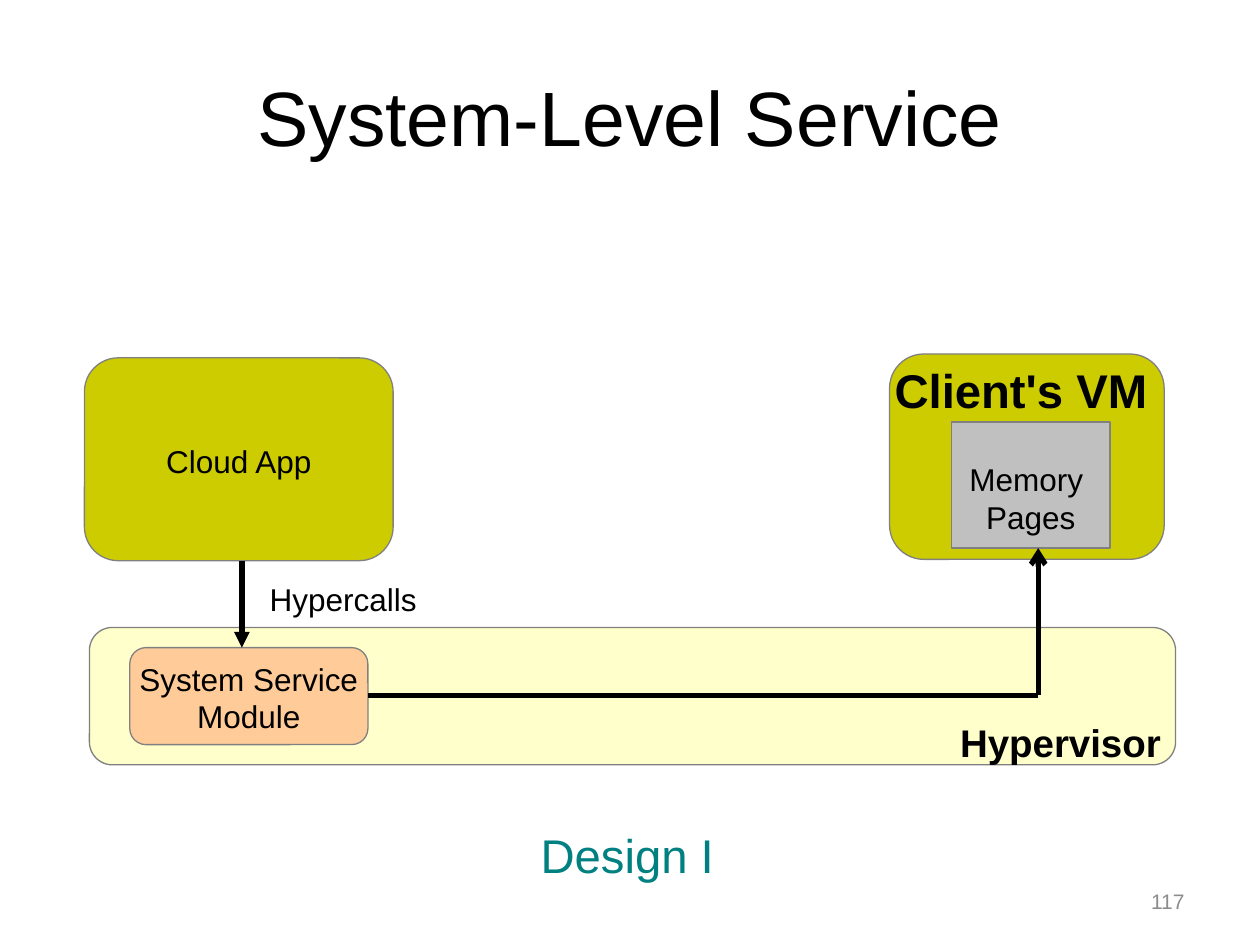
from lxml.etree import SubElement
from pptx import Presentation
from pptx.dml.color import RGBColor
from pptx.enum.shapes import MSO_CONNECTOR, MSO_SHAPE
from pptx.enum.text import MSO_ANCHOR, PP_ALIGN
from pptx.oxml.ns import qn
from pptx.util import Pt

PX = 9144  # EMU per px, 100 px to the inch
FONT = "Arial"
BLACK = RGBColor(0x00, 0x00, 0x00)
GRAY = RGBColor(0x80, 0x80, 0x80)
PALE = RGBColor(0x8C, 0x8C, 0x8C)
SILVER = RGBColor(0xC0, 0xC0, 0xC0)
CREAM = RGBColor(0xFF, 0xFF, 0xCC)
OLIVE = RGBColor(0xCC, 0xCC, 0x00)
PEACH = RGBColor(0xFF, 0xCC, 0x99)
TEAL = RGBColor(0x00, 0x80, 0x80)
LEFT, MID, RIGHT = PP_ALIGN.LEFT, PP_ALIGN.CENTER, PP_ALIGN.RIGHT
TOP, HALF = MSO_ANCHOR.TOP, MSO_ANCHOR.MIDDLE
ROUND, RECT = MSO_SHAPE.ROUNDED_RECTANGLE, MSO_SHAPE.RECTANGLE


def scale(*nums):
    return [n * PX for n in nums]


class Board:
    def __init__(self, slide):
        self.slide = slide

    def put(self, shape, lines, size, color=BLACK, bold=False, align=LEFT,
            anchor=TOP, pad=(9, 6, 9, 4), wrap=True):
        frame = shape.text_frame
        frame.word_wrap = wrap
        frame.vertical_anchor = anchor
        (frame.margin_left, frame.margin_top,
         frame.margin_right, frame.margin_bottom) = scale(*pad)
        for i, line in enumerate(lines):
            para = frame.add_paragraph() if i else frame.paragraphs[0]
            para.alignment = align
            run = para.add_run()
            run.text = line
            run.font.name = FONT
            run.font.size = Pt(size)
            run.font.bold = bold
            run.font.color.rgb = color

    def title(self, text, box):
        shape = self.slide.shapes.title
        shape.left, shape.top, shape.width, shape.height = scale(*box)
        self.put(shape, [text], 44, align=MID, anchor=HALF,
                 pad=(10, 4, 10, 5))

    def label(self, lines, box, size, **style):
        shape = self.slide.shapes.add_textbox(*scale(*box))
        self.put(shape, lines, size, **style)

    def block(self, kind, box, fill, lines=()):
        shape = self.slide.shapes.add_shape(kind, *scale(*box))
        shape.shadow.inherit = False
        shape.fill.solid()
        shape.fill.fore_color.rgb = fill
        shape.line.color.rgb = GRAY
        shape.line.width = Pt(0.75)
        if lines:
            self.put(shape, lines, 18, align=MID, anchor=HALF, wrap=False)

    def line(self, start, end, head=None):
        link = self.slide.shapes.add_connector(
            MSO_CONNECTOR.STRAIGHT, *scale(*start, *end))
        link.line.color.rgb = BLACK
        link.line.width = Pt(3)
        props = link.element.spPr
        if head:
            SubElement(props.find(qn("a:ln")), qn("a:tailEnd"), type=head)
        SubElement(props, qn("a:effectLst"))


def main():
    deck = Presentation()
    deck.slide_width, deck.slide_height = scale(1000, 750)
    board = Board(deck.slides.add_slide(deck.slide_layouts[5]))

    # Title and page number
    board.title("System-Level Service", (50, 30, 900, 125))
    board.label(["117"], (717, 695, 233, 40), 12, color=PALE,
                align=RIGHT, anchor=HALF, pad=(10, 5, 10, 5))

    # Hypervisor, app, client and service module
    board.block(ROUND, (71, 498, 862, 109), CREAM)
    board.block(ROUND, (67, 284, 245, 161), OLIVE, ["Cloud App"])
    board.block(ROUND, (706, 281, 218, 163), OLIVE)
    board.block(RECT, (755, 335, 126, 100), SILVER)
    board.block(ROUND, (103, 514, 189, 77), PEACH,
                ["System Service", "Module"])

    # Labels
    board.label(["Design I"], (420, 649, 336, 51), 27, color=TEAL,
                pad=(9, 7, 9, 4))
    board.label(["Memory ", "Pages"], (732, 359, 172, 60), 18, align=MID)
    board.label(["Client's VM"], (701, 280, 245, 51), 27, bold=True,
                pad=(9, 7, 9, 4))
    board.label(["Hypervisor"], (753, 564, 181, 43), 22, bold=True,
                pad=(9, 7, 9, 4))
    board.label(["Hypercalls"], (205, 454, 145, 34), 18)

    # Call down to the module, then across and up to the memory
    board.line((192, 445), (192, 514), "triangle")
    board.line((292, 552), (824, 552))
    board.line((824, 552), (824, 435), "arrow")

    deck.save("out.pptx")


if __name__ == "__main__":
    main()
